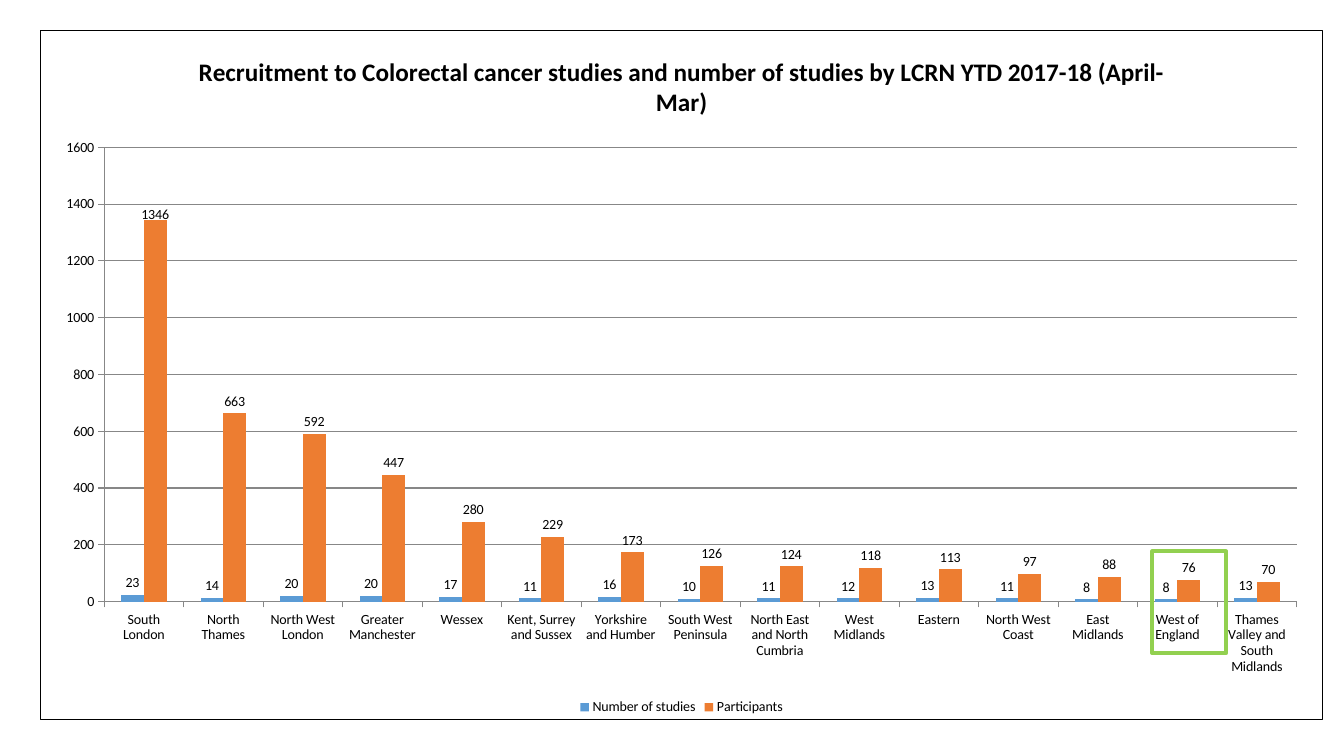
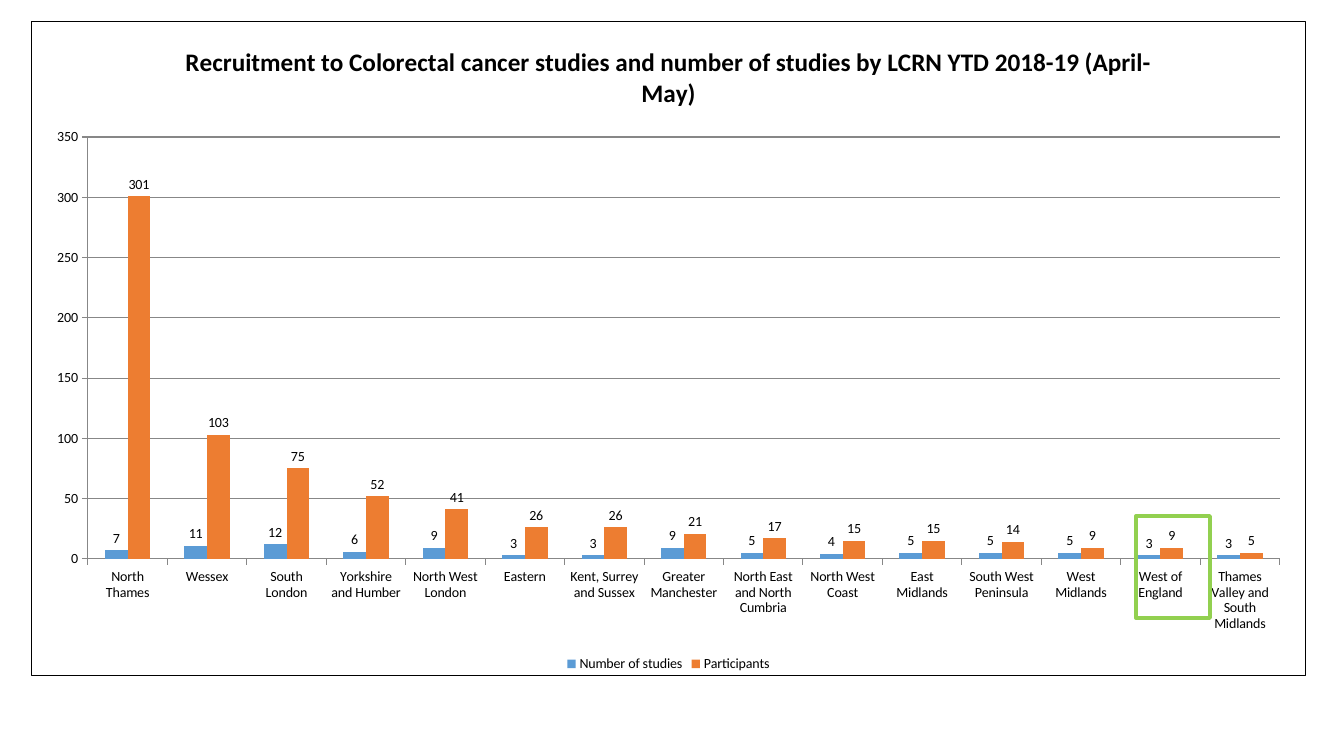
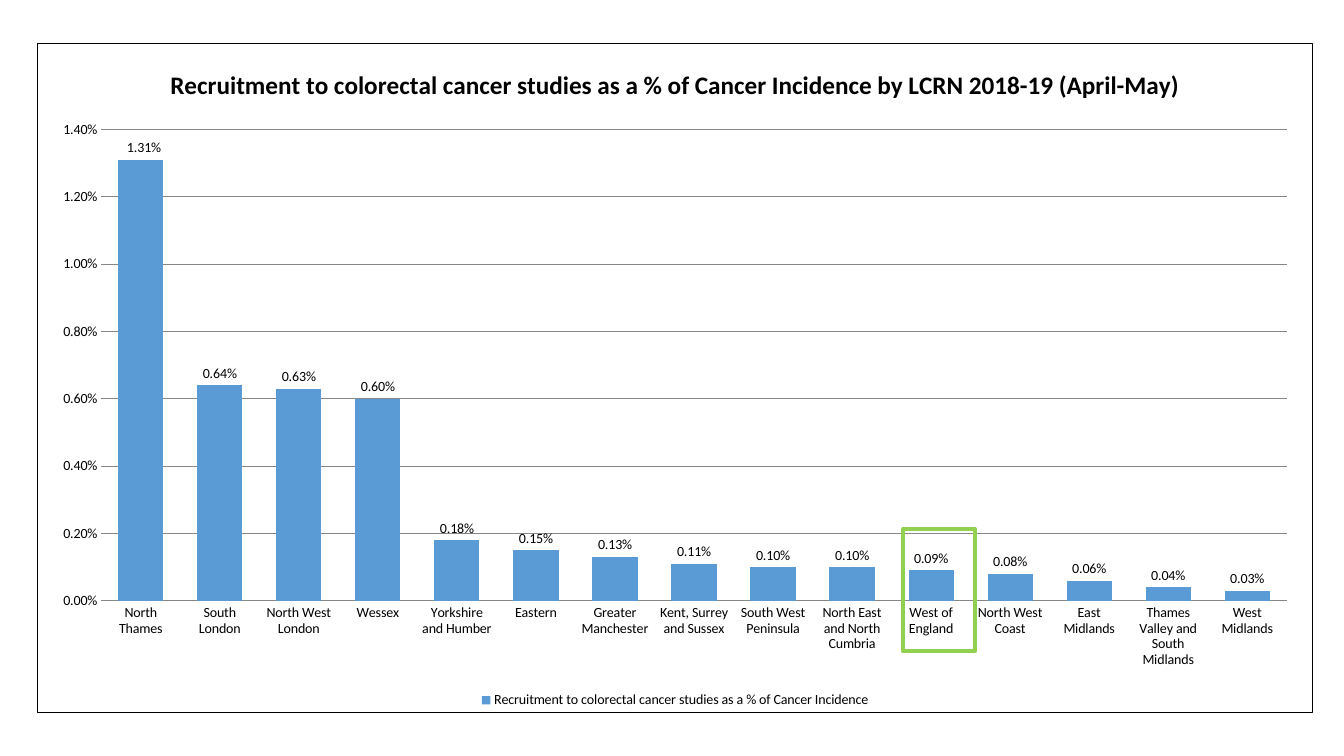
from dataclasses import dataclass

from pptx import Presentation
from pptx.chart.data import CategoryChartData
from pptx.dml.color import RGBColor
from pptx.enum.chart import (XL_CHART_TYPE, XL_LABEL_POSITION,
                             XL_LEGEND_POSITION, XL_TICK_MARK)
from pptx.enum.shapes import MSO_SHAPE
from pptx.oxml import parse_xml
from pptx.oxml.ns import nsdecls, qn
from pptx.util import Inches, Pt


@dataclass(frozen=True)
class Theme:
    font: str = "Calibri"
    text: str = "000000"
    grid: str = "878787"
    highlight: str = "92D050"
    series: tuple = ("5B9BD5", "ED7D31")
    title_size: int = 18
    body_size: int = 10
    thin: float = 0.75
    thick: int = 3


THEME = Theme()

# Boxes are left, top, width, height in inches.
# Each row holds a network and its values, one per series.
# first_label_shift moves the last series' first label, in shares of the chart.
SLIDES = [
    {
        "title": "Recruitment to Colorectal cancer studies and number of "
                 "studies by LCRN YTD 2017-18 (April- Mar)",
        "box": (0.4, 0.3, 12.72, 6.84),
        "highlight": (11.43, 5.47, 0.73, 1.01),
        "series": ["Number of studies", "Participants"],
        "rows": [
            ("South London", 23, 1346),
            ("North Thames", 14, 663),
            ("North West London", 20, 592),
            ("Greater Manchester", 20, 447),
            ("Wessex", 17, 280),
            ("Kent, Surrey and Sussex", 11, 229),
            ("Yorkshire and Humber", 16, 173),
            ("South West Peninsula", 10, 126),
            ("North East and North Cumbria", 11, 124),
            ("West Midlands", 12, 118),
            ("Eastern", 13, 113),
            ("North West Coast", 11, 97),
            ("East Midlands", 8, 88),
            ("West of England", 8, 76),
            ("Thames Valley and South Midlands", 13, 70),
        ],
        "scale": (1600, 200), "format": "General",
        "gap": 150, "overlap": 0, "ticks": True,
        "first_label_shift": (0, 0.01),
    },
    {
        "title": "Recruitment to Colorectal cancer studies and number of "
                 "studies by LCRN YTD 2018-19 (April- May)",
        "box": (0.31, 0.21, 12.64, 6.5),
        "highlight": (11.27, 5.12, 0.73, 1.01),
        "series": ["Number of studies", "Participants"],
        "rows": [
            ("North Thames", 7, 301),
            ("Wessex", 11, 103),
            ("South London", 12, 75),
            ("Yorkshire and Humber", 6, 52),
            ("North West London", 9, 41),
            ("Eastern", 3, 26),
            ("Kent, Surrey and Sussex", 3, 26),
            ("Greater Manchester", 9, 21),
            ("North East and North Cumbria", 5, 17),
            ("North West Coast", 4, 15),
            ("East Midlands", 5, 15),
            ("South West Peninsula", 5, 14),
            ("West Midlands", 5, 9),
            ("West of England", 3, 9),
            ("Thames Valley and South Midlands", 3, 5),
        ],
        "scale": (350, 50), "format": "General",
        "gap": 150, "overlap": 0, "ticks": True,
        "first_label_shift": None,
    },
    {
        "title": "Recruitment to colorectal cancer studies as a % of Cancer "
                 "Incidence by LCRN 2018-19 (April-May)",
        "box": (0.37, 0.43, 12.65, 6.64),
        "highlight": (8.96, 5.25, 0.71, 1.21),
        "series": ["Recruitment to colorectal cancer studies as a % of "
                   "Cancer Incidence"],
        "rows": [
            ("North Thames", 0.0131),
            ("South London", 0.0064),
            ("North West London", 0.0063),
            ("Wessex", 0.006),
            ("Yorkshire and Humber", 0.0018),
            ("Eastern", 0.0015),
            ("Greater Manchester", 0.0013),
            ("Kent, Surrey and Sussex", 0.0011),
            ("South West Peninsula", 0.001),
            ("North East and North Cumbria", 0.001),
            ("West of England", 0.0009),
            ("North West Coast", 0.0008),
            ("East Midlands", 0.0006),
            ("Thames Valley and South Midlands", 0.0004),
            ("West Midlands", 0.0003),
        ],
        "scale": (0.014, 0.002), "format": "0.00%",
        "gap": 75, "overlap": -25, "ticks": False,
        "first_label_shift": (0.0025, 0),
    },
]


def color(code):
    return RGBColor.from_string(code)


def style_font(font, size, bold=False):
    font.name = THEME.font
    font.size = Pt(size)
    font.bold = bold
    font.color.rgb = color(THEME.text)


def style_line(line, code, width):
    line.color.rgb = color(code)
    line.width = Pt(width)


def frame_chart(chart):
    """Give the chart area a thin outline and no fill."""
    outline = parse_xml(
        f'<c:spPr {nsdecls("c", "a")}><a:noFill/>'
        f'<a:ln w="{Pt(THEME.thin)}"><a:solidFill>'
        f'<a:srgbClr val="{THEME.text}"/></a:solidFill></a:ln></c:spPr>')
    chart.element.find(qn("c:chart")).addnext(outline)


def shift_first_label(series, shift):
    """Move the label of the first bar by shares of the chart's size."""
    label = series.points[0].data_label
    style_font(label.font, THEME.body_size)
    label.position = XL_LABEL_POSITION.OUTSIDE_END
    x, y = shift
    layout = parse_xml(
        f'<c:layout {nsdecls("c")}><c:manualLayout>'
        f'<c:x val="{x}"/><c:y val="{y}"/></c:manualLayout></c:layout>')
    series.points[0].data_label._get_or_add_dLbl().find(
        qn("c:idx")).addnext(layout)


def style_axes(chart, content):
    tick = XL_TICK_MARK.OUTSIDE if content["ticks"] else XL_TICK_MARK.NONE
    for axis in (chart.category_axis, chart.value_axis):
        axis.major_tick_mark = tick
        axis.minor_tick_mark = XL_TICK_MARK.NONE
        style_line(axis.format.line, THEME.grid, THEME.thin)
    values = chart.value_axis
    values.minimum_scale = 0
    values.maximum_scale, values.major_unit = content["scale"]
    values.tick_labels.number_format = content["format"]
    values.tick_labels.number_format_is_linked = False
    style_line(values.major_gridlines.format.line, THEME.grid, THEME.thin)
    if not content["ticks"]:
        values.format.line.fill.background()


def style_series(plot, content):
    plot.gap_width = content["gap"]
    plot.overlap = content["overlap"]
    plot.vary_by_categories = False
    for series, code in zip(plot.series, THEME.series):
        series.format.fill.solid()
        series.format.fill.fore_color.rgb = color(code)
        labels = series.data_labels
        labels.show_value = True
        labels.position = XL_LABEL_POSITION.OUTSIDE_END
        labels.number_format = content["format"]
        labels.number_format_is_linked = False
        style_font(labels.font, THEME.body_size)
    if content["first_label_shift"]:
        shift_first_label(series, content["first_label_shift"])


def add_recruitment_chart(slide, content):
    networks, *columns = zip(*content["rows"])
    data = CategoryChartData(number_format=content["format"])
    data.categories = networks
    for name, values in zip(content["series"], columns):
        data.add_series(name, values)
    chart = slide.shapes.add_chart(
        XL_CHART_TYPE.COLUMN_CLUSTERED, *map(Inches, content["box"]),
        data).chart
    style_font(chart.font, THEME.body_size)
    frame_chart(chart)

    chart.has_title = True
    heading = chart.chart_title.text_frame
    heading.text = content["title"]
    style_font(heading.paragraphs[0].runs[0].font, THEME.title_size, bold=True)
    chart.chart_title.include_in_layout = False

    chart.has_legend = True
    chart.legend.position = XL_LEGEND_POSITION.BOTTOM
    chart.legend.include_in_layout = False

    style_axes(chart, content)
    style_series(chart.plots[0], content)


def add_highlight(slide, box):
    frame = slide.shapes.add_shape(MSO_SHAPE.RECTANGLE, *map(Inches, box))
    frame.shadow.inherit = False
    frame.fill.background()
    style_line(frame.line, THEME.highlight, THEME.thick)


def main():
    deck = Presentation()
    deck.slide_width, deck.slide_height = Inches(13.33), Inches(7.5)
    blank = deck.slide_layouts[6]
    for content in SLIDES:
        slide = deck.slides.add_slide(blank)
        add_recruitment_chart(slide, content)
        add_highlight(slide, content["highlight"])
    deck.save("out.pptx")


if __name__ == "__main__":
    main()
